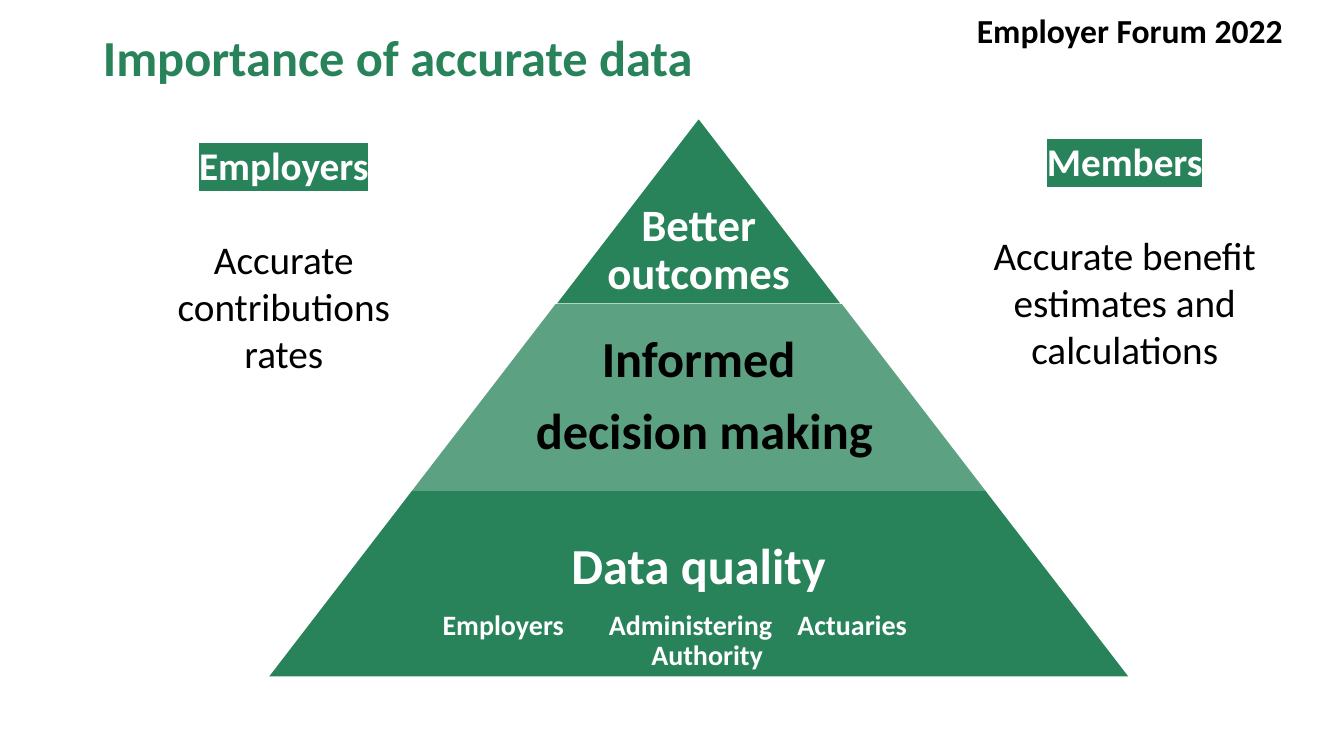
import pptx
import pptx.util
import pptx.dml.color
import pptx.enum.shapes
import pptx.enum.text
import pptx.oxml.ns
from lxml import etree

Inches, Pt = pptx.util.Inches, pptx.util.Pt
ALIGN = pptx.enum.text.PP_ALIGN
ANCHOR = pptx.enum.text.MSO_ANCHOR
qn = pptx.oxml.ns.qn

GREEN, WHITE, BLACK = "28825A", "FFFFFF", "000000"
FONT = "Calibri"

# Pyramid grid: each tier is one row high and one column wider than the last
APEX_X, APEX_Y = 6.93, 1.17
COL, ROW = 2.84, 1.847


def rgb(hex_color):
    return pptx.dml.color.RGBColor.from_string(hex_color)


def style(p, size, color, bold=False, align=ALIGN.CENTER, spacing=None, highlight=None):
    p.alignment = align
    if spacing:
        p.line_spacing = spacing
    for r in p.runs:
        r.font.size, r.font.bold = Pt(size), bold
        r.font.color.rgb = rgb(color)
        if highlight:
            mark = etree.SubElement(r.font._element, qn("a:highlight"))
            etree.SubElement(mark, qn("a:srgbClr"), val=highlight)
        r.font.name = FONT


def add_text(s, x, y, w, h, lines, anchor=ANCHOR.TOP, inset=0.1):
    tf = s.shapes.add_textbox(Inches(x), Inches(y), Inches(w), Inches(h)).text_frame
    tf.word_wrap = True
    tf.vertical_anchor = anchor
    tf.margin_left = tf.margin_right = Inches(inset)
    tf.margin_top = tf.margin_bottom = Inches(0.05)
    tf.text = "\n".join(lines)
    return tf.paragraphs


def add_tier(s, level, alpha=100, outlined=False):
    """Draw one tier, counted from 1 at the top."""
    w = COL * level
    sp = s.shapes.add_shape(pptx.enum.shapes.MSO_SHAPE.TRAPEZOID,
                            Inches(APEX_X - w / 2), Inches(APEX_Y + ROW * (level - 1)),
                            Inches(w), Inches(ROW))
    sp.adjustments[0] = COL / 2 / ROW
    sp.shadow.inherit = False
    sp.fill.solid()
    sp.fill.fore_color.rgb = rgb(GREEN)
    if alpha < 100:
        clr = sp.fill._xPr.find(qn("a:solidFill"))[0]
        etree.SubElement(clr, qn("a:alpha"), val=str(alpha * 1000))
    if outlined:
        sp.line.color.rgb = rgb(WHITE)
        sp.line.width = Pt(1)
    else:
        sp.line.fill.background()


def add_tier_text(s, level, w, lines, size, color, anchor):
    ps = add_text(s, APEX_X - w / 2, APEX_Y + ROW * (level - 1), w, ROW, lines, anchor, 0.05)
    for p in ps:
        style(p, size, color, True, spacing=0.9)
    return ps


def add_tabs(p, stops):
    pPr = p._p.get_or_add_pPr()
    pPr.set("marL", str(Inches(0.18)))
    tabs = etree.SubElement(pPr, qn("a:tabLst"))
    for stop in stops:
        etree.SubElement(tabs, qn("a:tab"), pos=str(Inches(stop)), algn="l")


def add_benefit(s, x, y, heading, detail):
    head, body = add_text(s, x, y, 2.83, 2.46, [heading, detail])
    style(head, 28, WHITE, True, highlight=GREEN)
    style(body, 28, BLACK)
    body.space_before = Pt(34)


def main():
    prs = pptx.Presentation()
    prs.slide_width, prs.slide_height = Inches(13.33), Inches(7.5)
    s = prs.slides.add_slide(prs.slide_layouts[5])

    # Title and event name
    title = s.shapes.title
    title.left, title.top = Inches(0.92), Inches(0.11)
    title.width, title.height = Inches(11.5), Inches(0.98)
    title.text_frame.text = "Importance of accurate data"
    title.text_frame.vertical_anchor = ANCHOR.MIDDLE
    style(title.text_frame.paragraphs[0], 36, GREEN, True, ALIGN.LEFT, 0.9)
    event = add_text(s, 9.59, 0.05, 3.6, 0.5, ["Employer Forum 2022"])
    style(event[0], 24, BLACK, True, ALIGN.LEFT)

    # Pyramid
    add_tier(s, 1, outlined=True)
    add_tier(s, 2, alpha=75)
    add_tier(s, 3)
    add_tier_text(s, 1, COL, ["Better outcomes"], 32, WHITE, ANCHOR.BOTTOM)
    middle = add_tier_text(s, 2, 3.69, ["Informed", " decision making"], 36, BLACK,
                           ANCHOR.MIDDLE)
    middle[0].space_after = Pt(12.6)

    # Base tier with the parties responsible
    base, parties, authority = add_tier_text(
        s, 3, 5.54,
        ["Data quality", "Employers\tAdministering\tActuaries", "\tAuthority"],
        36, WHITE, ANCHOR.BOTTOM)
    base.space_after = Pt(11)
    for p, stops in ((parties, (1.65, 3.52)), (authority, (2.07,))):
        add_tabs(p, stops)
        style(p, 20, WHITE, True, ALIGN.LEFT, 0.9)

    # Benefits on either side
    add_benefit(s, 1.4, 1.35, "Employers", "Accurate contributions rates")
    add_benefit(s, 9.74, 1.31, "Members", "Accurate benefit estimates and calculations")

    prs.save("out.pptx")


if __name__ == "__main__":
    main()
